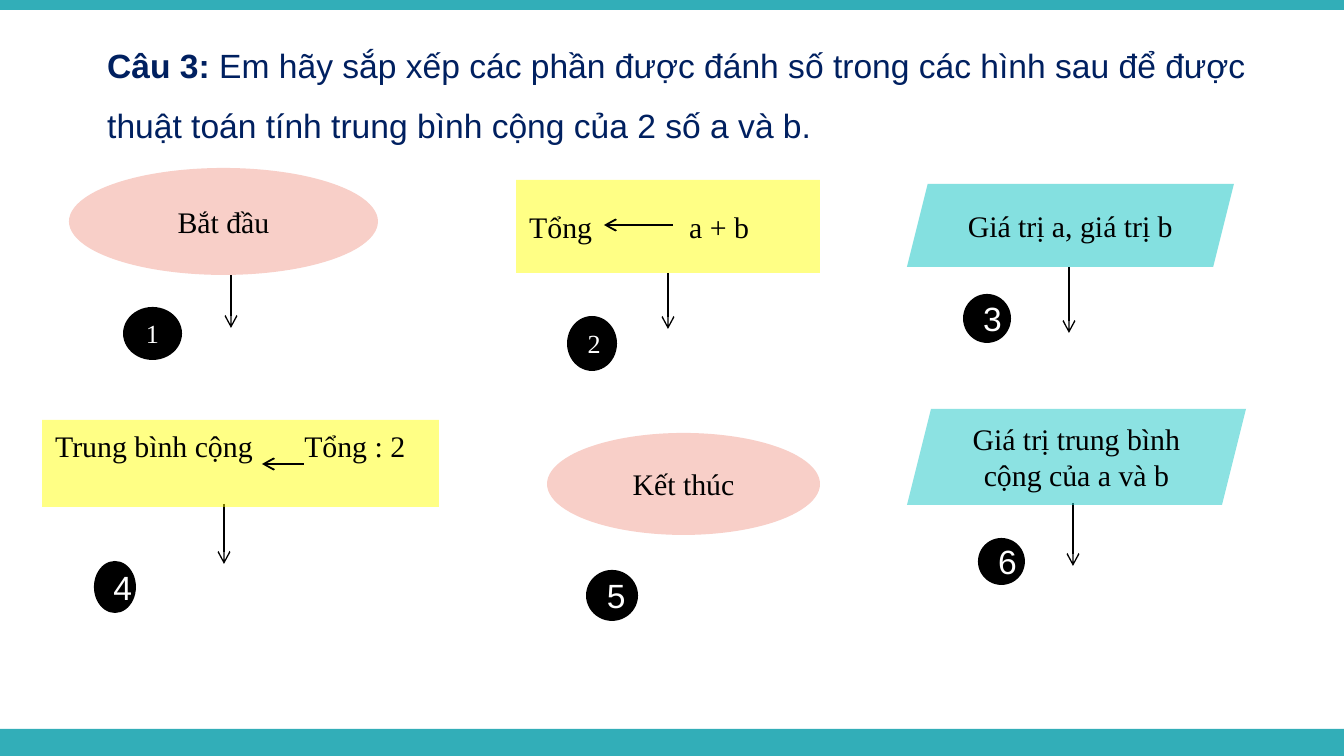
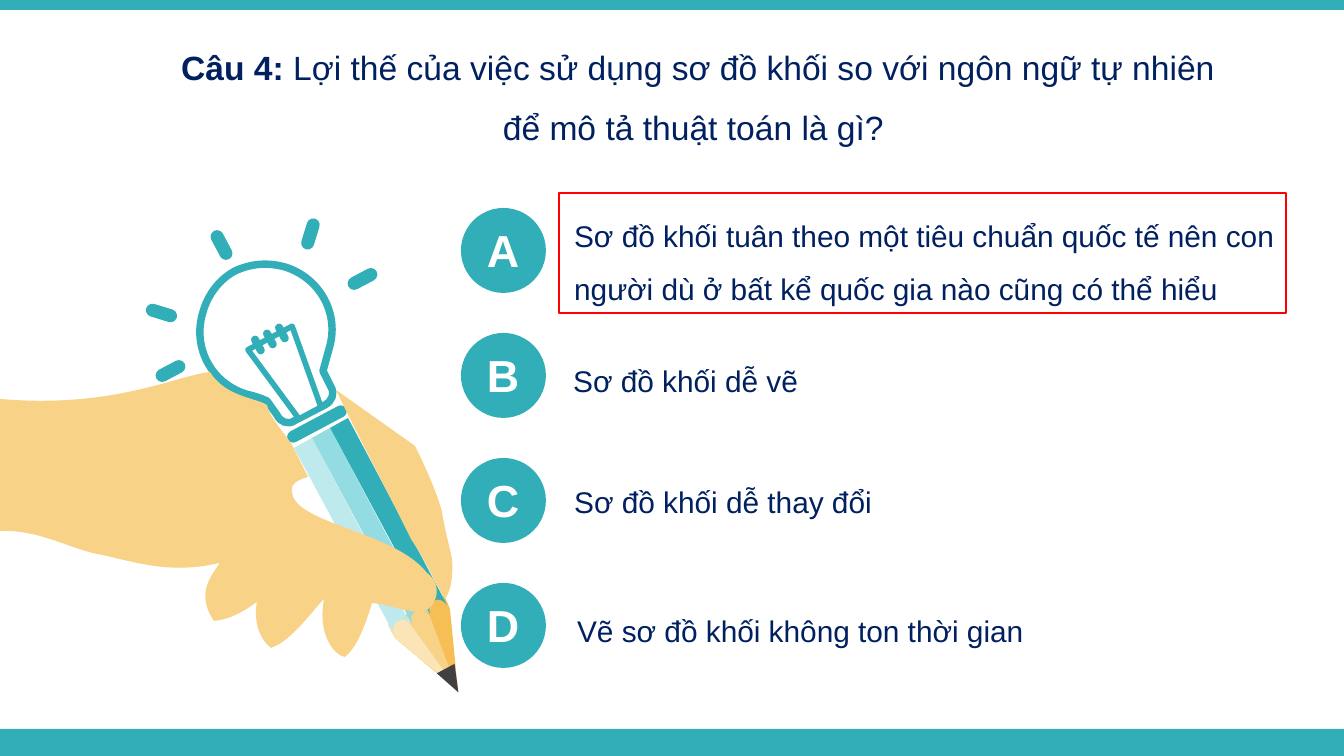
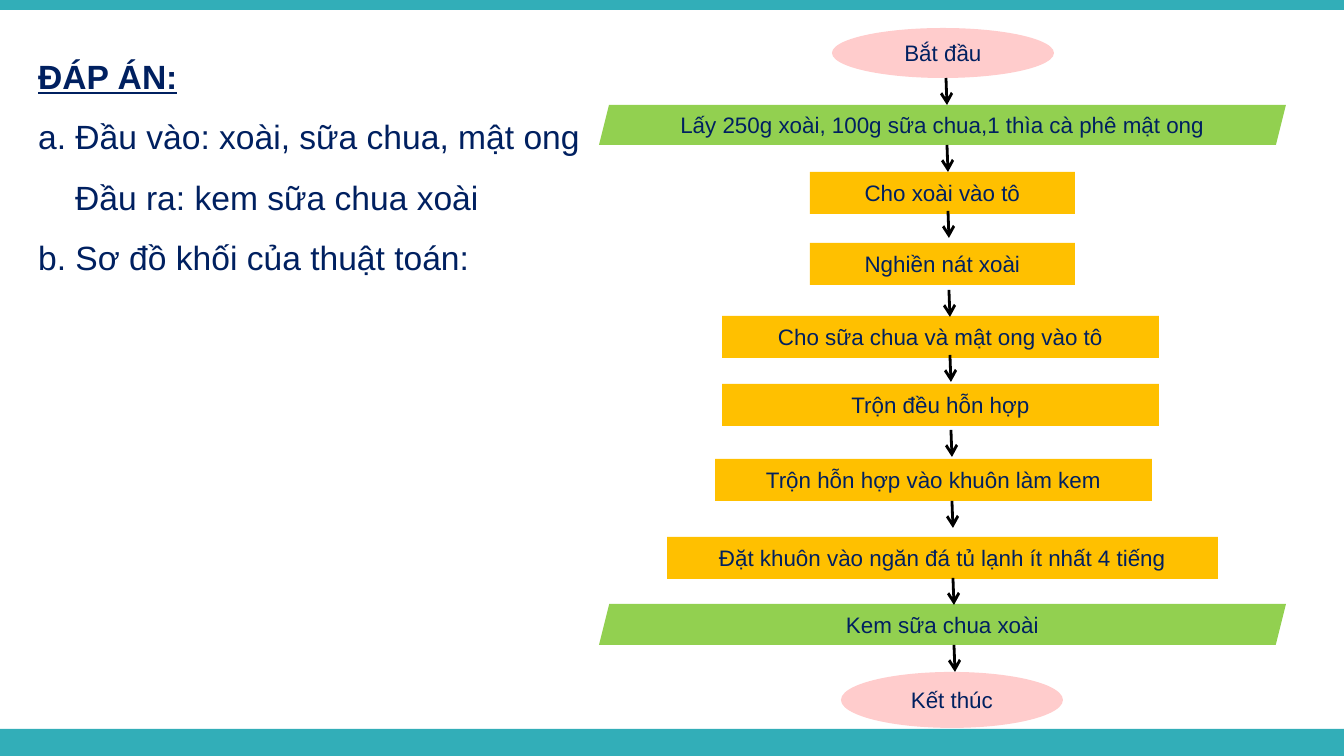
from lxml.etree import SubElement
from pptx import Presentation
from pptx.dml.color import RGBColor
from pptx.enum.shapes import MSO_CONNECTOR, MSO_SHAPE as Preset
from pptx.enum.text import MSO_ANCHOR as Anchor, PP_ALIGN as Align
from pptx.oxml.ns import qn
from pptx.util import Pt

SCALE = 914400 / 134.4
SLIDE_W, SLIDE_H = 1344, 756

TEAL = RGBColor(0x32, 0xAE, 0xB8)
TEAL_MID = RGBColor(0x92, 0xDC, 0xE2)
TEAL_PALE = RGBColor(0xBE, 0xEA, 0xED)
NAVY = RGBColor(0x00, 0x20, 0x60)
BLACK = RGBColor(0x00, 0x00, 0x00)
WHITE = RGBColor(0xFF, 0xFF, 0xFF)
GRAPHITE = RGBColor(0x40, 0x40, 0x40)
RED = RGBColor(0xFF, 0x00, 0x00)
PINK = RGBColor(0xF8, 0xCF, 0xC8)
YELLOW = RGBColor(0xFF, 0xFF, 0x00)
AQUA = RGBColor(0x33, 0xCC, 0xCC)
ROSE = RGBColor(0xFF, 0xCC, 0xCC)
GREEN = RGBColor(0x92, 0xD0, 0x50)
AMBER = RGBColor(0xFF, 0xC0, 0x00)
SKIN = RGBColor(0xF8, 0xD2, 0x86)
WOOD_DARK = RGBColor(0xF6, 0xBF, 0x56)
WOOD_PALE = RGBColor(0xFB, 0xE4, 0xB6)

SANS, SERIF = "Arial", "Times New Roman"


def px(length):
    return round(length * SCALE)


def emu(box):
    return [px(length) for length in box]


def paint(shape, fill=None, line=None, width=1, alpha=None):
    shape.shadow.inherit = False
    if fill is None:
        shape.fill.background()
    else:
        shape.fill.solid()
        shape.fill.fore_color.rgb = fill
    if alpha is not None:
        color = shape._element.spPr.find(".//" + qn("a:srgbClr"))
        SubElement(color, qn("a:alpha"), val=str(alpha * 1000))
    if line is None:
        shape.line.fill.background()
    else:
        shape.line.color.rgb = line
        shape.line.width = Pt(width)
    return shape


def draw(slide, preset, box, fill=None, turn=0, **look):
    shape = paint(slide.shapes.add_shape(preset, *emu(box)), fill, **look)
    shape.rotation = turn
    if preset == Preset.ROUNDED_RECTANGLE:
        shape.adjustments[0] = 0.5
    return shape


def write(frame, paragraphs, size=18, font=SANS, color=NAVY, bold=False, underline=False,
          align=Align.LEFT, spacing=None, anchor=Anchor.MIDDLE, wrap=True,
          tab=None, top=None, bottom=None):
    frame.word_wrap = wrap
    frame.vertical_anchor = anchor
    if top is not None:
        frame.margin_top = px(top)
    if bottom is not None:
        frame.margin_bottom = px(bottom)
    for index, runs in enumerate(paragraphs):
        paragraph = frame.add_paragraph() if index else frame.paragraphs[0]
        paragraph.alignment = align
        if spacing:
            paragraph.line_spacing = spacing
        for text, style in runs:
            run = paragraph.add_run()
            run.text = text
            run.font.name = font
            run.font.size = Pt(size)
            run.font.color.rgb = color
            run.font.bold = style.get("bold", bold)
            run.font.underline = style.get("underline", underline)
            if "indent" in style:
                paragraph._p.get_or_add_pPr().set("marL", str(px(style["indent"])))
        if tab:
            stops = SubElement(paragraph._p.get_or_add_pPr(), qn("a:tabLst"))
            SubElement(stops, qn("a:tab"), pos=str(px(tab)), algn="l")


def plain(text):
    return [[(text, {})]]


def label(slide, box, paragraphs, **style):
    write(slide.shapes.add_textbox(*emu(box)).text_frame, paragraphs,
          **{"anchor": Anchor.TOP, **style})


def arrow(slide, start, end, width):
    connector = slide.shapes.add_connector(MSO_CONNECTOR.STRAIGHT, *emu(start + end))
    connector.line.color.rgb = BLACK
    connector.line.width = Pt(width)
    properties = connector._element.spPr
    SubElement(properties.find(qn("a:ln")), qn("a:tailEnd"), type="arrow")
    SubElement(properties, qn("a:effectLst"))


def bend(shape, steps):
    nodes = iter(list(shape._element.iter(qn("a:lnTo"))))
    for step in steps:
        curve, *ends = [next(nodes) for _ in range(len(step) // 2)]
        if ends:
            curve.tag = qn("a:cubicBezTo")
        for end in ends:
            curve.append(end[0])
            end.getparent().remove(end)


def trace(slide, origin, outlines, fill, **look):
    builder = slide.shapes.build_freeform(*outlines[0][0], scale=SCALE)
    for index, (start, *steps) in enumerate(outlines):
        if index:
            builder.move_to(*start)
        points = [step[i:i + 2] for step in steps for i in range(0, len(step), 2)]
        builder.add_line_segments(points, close=True)
    shape = paint(builder.convert_to_shape(*emu(origin)), fill, **look)
    bend(shape, [step for outline in outlines for step in outline[1:]])


def new_slide(deck):
    return deck.slides.add_slide(deck.slide_layouts[6])


def share_bands(slide):
    for top, height in ((729, 27), (0, 10)):
        band = draw(slide, Preset.RECTANGLE, (0, top, SLIDE_W, height), TEAL)
        slide.slide_layout.shapes.element.append(band._element)


def question(slide, box, number, text, **style):
    label(slide, box, [[(number, {"bold": True}), (text, {})]], spacing=1.5, **style)


def puzzle_piece(slide, box, preset, fill, text, badge, number, number_style,
                 alpha=None, down=None, assign=None, **style):
    x, y, w, h = box
    if down:
        across, start, end = down
        arrow(slide, (x + across, y + start), (x + across, y + end), 0.75)
    piece = draw(slide, preset, box, fill, alpha=alpha)
    write(piece.text_frame, plain(text), size=16, font=SERIF, color=BLACK,
          **{"align": Align.CENTER, **style})
    if assign:
        start, end, level = assign
        arrow(slide, (x + start, y + level), (x + end, y + level), 1)
    dx, dy, badge_w, badge_h = badge
    disc = draw(slide, Preset.OVAL, (x + dx, y + dy, badge_w, badge_h), BLACK)
    write(disc.text_frame, plain(number), color=WHITE, align=Align.CENTER, **number_style)


def ordering_slide(deck):
    slide = new_slide(deck)
    share_bands(slide)
    question(slide, (94, 18, 1180, 136), "Câu 3: ",
             "Em hãy sắp xếp các phần được đánh số trong các hình sau để được "
             "thuật toán tính trung bình cộng của 2 số a và b.")
    small = {"size": 14, "font": SERIF}
    large = {"size": 18, "font": SANS}
    puzzle_piece(slide, (69, 168, 309, 107), Preset.OVAL, PINK, "Bắt đầu",
                 (54, 139, 59, 53), "1", small, down=(162, 90, 160))
    puzzle_piece(slide, (516, 180, 304, 93), Preset.RECTANGLE, YELLOW, "Tổng\ta + b",
                 (51, 136, 50, 55), "2", small, alpha=48, down=(152, 93, 149),
                 assign=(157, 88, 45), align=Align.LEFT, tab=160)
    puzzle_piece(slide, (907, 184, 327, 83), Preset.PARALLELOGRAM, AQUA,
                 "Giá trị a, giá trị b",
                 (56, 110, 48, 49), "3", large, alpha=60, down=(162, 83, 149))
    puzzle_piece(slide, (42, 420, 397, 87), Preset.RECTANGLE, YELLOW,
                 "Trung bình cộng\tTổng : 2",
                 (52, 141, 42, 52), "4", large, alpha=48, down=(182, 84, 144),
                 assign=(262, 220, 44), align=Align.LEFT, tab=249,
                 anchor=Anchor.TOP, top=8)
    puzzle_piece(slide, (547, 433, 273, 102), Preset.OVAL, PINK, "Kết thúc",
                 (39, 137, 52, 51), "5", large)
    puzzle_piece(slide, (907, 409, 339, 96), Preset.PARALLELOGRAM, AQUA,
                 "Giá trị trung bình cộng của a và b",
                 (71, 129, 47, 47), "6", large, alpha=56, down=(166, 94, 157))


def pencil(slide, origin):
    x, y = origin
    trace(slide, origin, [[(388, 425), (444, 395), (450, 409), (458, 491), (395, 438)]],
          WOOD_DARK)
    trace(slide, origin, [[(406, 414), (425, 405), (429, 414), (458, 491), (413, 428)]],
          SKIN)
    trace(slide, origin, [[(388, 425), (406, 416), (409, 418, 410, 421, 411, 425),
                           (457, 489), (395, 438)]], WOOD_PALE)
    stripe = [(294, 248), (312, 238), (411, 425), (407, 420, 402, 418, 398, 421),
              (394, 422, 392, 429, 394, 434)]
    for i, shade in enumerate((TEAL_PALE, TEAL_MID, TEAL)):
        trace(slide, (x + 18 * i, y - 10 * i), [stripe], shade)
    draw(slide, Preset.ISOSCELES_TRIANGLE, (x + 442, y + 467, 20, 27), GRAPHITE, turn=152)


def bulb(slide, origin):
    x, y = origin
    glass = [(235, 71), (250, 64, 267, 62, 285, 67), (320, 78, 340, 114, 329, 149),
             (323, 171), (331, 187), (335, 194, 332, 201, 325, 205), (294, 221),
             (288, 225, 280, 222, 277, 215), (267, 201), (261, 198, 254, 196, 246, 194),
             (211, 183, 192, 147, 203, 112), (208, 94, 220, 79, 235, 71)]
    trace(slide, origin, [glass], WHITE, line=TEAL, width=4)
    draw(slide, Preset.TRAPEZOID, (x + 265, y + 133, 50, 85), WHITE, turn=152,
         line=TEAL, width=3)
    rays = [(304, 18, 17), (155, 97, 287), (215, 29, 332), (356, 63, 62), (164, 155, 242)]
    pills = [(dx, dy, 13, 32, turn) for dx, dy, turn in rays]
    pills.append((284, 218, 66, 12, 332))
    pills += [(254 + 12 * i, 135 - 6 * i, 8, 20, 332) for i in range(3)]
    for dx, dy, w, h, turn in pills:
        draw(slide, Preset.ROUNDED_RECTANGLE, (x + dx, y + dy, w, h), TEAL, turn=turn)


def hand(slide, origin):
    finger = [(336, 190), (415, 246), (426, 268, 437, 293, 442, 312),
              (445, 331, 449, 344, 452, 359), (453, 373, 452, 390, 445, 399),
              (438, 390, 433, 373, 411, 339), (394, 304, 355, 230, 336, 190)]
    palm = [(210, 172), (224, 196, 255, 198, 267, 205), (269, 217, 286, 235, 292, 245),
            (298, 257, 302, 265, 308, 277), (298, 280, 290, 284, 292, 292),
            (294, 324, 394, 331, 427, 373), (445, 386, 435, 410, 422, 412),
            (403, 412, 396, 406, 372, 403), (364, 430, 356, 448, 345, 457),
            (336, 456, 317, 437, 324, 399), (310, 414, 290, 442, 271, 448),
            (257, 437, 254, 417, 257, 402), (246, 410, 230, 420, 214, 421),
            (196, 395, 210, 377, 220, 363), (172, 374, 142, 364, 102, 355),
            (71, 350, 42, 330, 0, 331), (0, 199), (112, 209, 176, 176, 210, 172)]
    trace(slide, origin, [finger, palm], SKIN)


def answers(slide, origin):
    x, y = origin
    choices = [
        ("A", "Sơ đồ khối tuân theo một tiêu chuẩn quốc tế nên con người dù ở "
              "bất kể quốc gia nào cũng có thể hiểu", (100, -15, 743, 122), True),
        ("B", "Sơ đồ khối dễ vẽ", (99, 23, 255, 50), False),
        ("C", "Sơ đồ khối dễ thay đổi", (100, 19, 328, 50), False),
        ("D", "Vẽ sơ đồ khối không ton thời gian", (103, 23, 478, 50), False),
    ]
    for i, (letter, text, (dx, dy, w, h), long) in enumerate(choices):
        row = y + 125 * i
        draw(slide, Preset.OVAL, (x, row, 85, 85), TEAL)
        label(slide, (x - 5, row + 8, 94, 67), plain(letter), size=24, color=WHITE,
              bold=True, align=Align.CENTER)
        label(slide, (x + dx, row + dy, w, h), plain(text), size=16, wrap=long,
              spacing=1.5 if long else None)
    draw(slide, Preset.RECTANGLE, (x + 98, y - 15, 727, 120), line=RED)


def choice_slide(deck):
    slide = new_slide(deck)
    drawing = (0, 200)
    pencil(slide, drawing)
    bulb(slide, drawing)
    hand(slide, drawing)
    question(slide, (157, 50, 1082, 106), "Câu 4: ",
             "Lợi thế của việc sử dụng sơ đồ khối so với ngôn ngữ tự nhiên "
             "để mô tả thuật toán là gì? ",
             align=Align.CENTER, anchor=Anchor.MIDDLE, bottom=39)
    answers(slide, (461, 208))


def flowchart(slide, box):
    x, y, w, h = box
    oval, slanted, block = Preset.OVAL, Preset.PARALLELOGRAM, Preset.RECTANGLE
    steps = [
        (oval, ROSE, "Bắt đầu", 0, 222, 50, 1),
        (slanted, GREEN, "Lấy 250g xoài, 100g sữa chua,1 thìa cà phê mật ong", 77, w, 40, 0),
        (block, AMBER, "Cho xoài vào tô", 144, 265, 42, 0),
        (block, AMBER, "Nghiền nát xoài", 215, 265, 42, 0),
        (block, AMBER, "Cho sữa chua và mật ong vào tô", 288, 437, 42, -2),
        (block, AMBER, "Trộn đều hỗn hợp", 356, 437, 42, -2),
        (block, AMBER, "Trộn hỗn hợp vào khuôn làm kem", 431, 437, 42, -9),
        (block, AMBER, "Đặt khuôn vào ngăn đá tủ lạnh ít nhất 4 tiếng", 509, 551, 42, 0),
        (slanted, GREEN, "Kem sữa chua xoài", 576, w, 41, 0),
        (oval, ROSE, "Kết thúc", h - 56, 222, 56, 10),
    ]
    for preset, fill, text, top, width, height, shift in steps:
        left = x + (w - width) // 2 + shift
        step = draw(slide, preset, (left, y + top, width, height), fill)
        write(step.text_frame, plain(text), size=12, align=Align.CENTER)
    for i, top in enumerate((50, 117, 183, 262, 327, 402, 473, 550, 617)):
        across = x + 347 + i
        arrow(slide, (across, y + top), (across + 1, y + top + 27), 1.5)


def solution_slide(deck):
    slide = new_slide(deck)
    label(slide, (25, 29, 672, 258), [
        [("ĐÁP ÁN:", {"bold": True, "underline": True})],
        [("a. Đầu vào: xoài, sữa chua, mật ong", {})],
        [("Đầu ra: kem sữa chua xoài", {"indent": 37})],
        [("b. Sơ đồ khối của thuật toán:", {})],
    ], spacing=1.5)
    flowchart(slide, (599, 28, 687, 700))


def main():
    deck = Presentation()
    deck.slide_width, deck.slide_height = px(SLIDE_W), px(SLIDE_H)
    ordering_slide(deck)
    choice_slide(deck)
    solution_slide(deck)
    deck.save("out.pptx")


if __name__ == "__main__":
    main()
